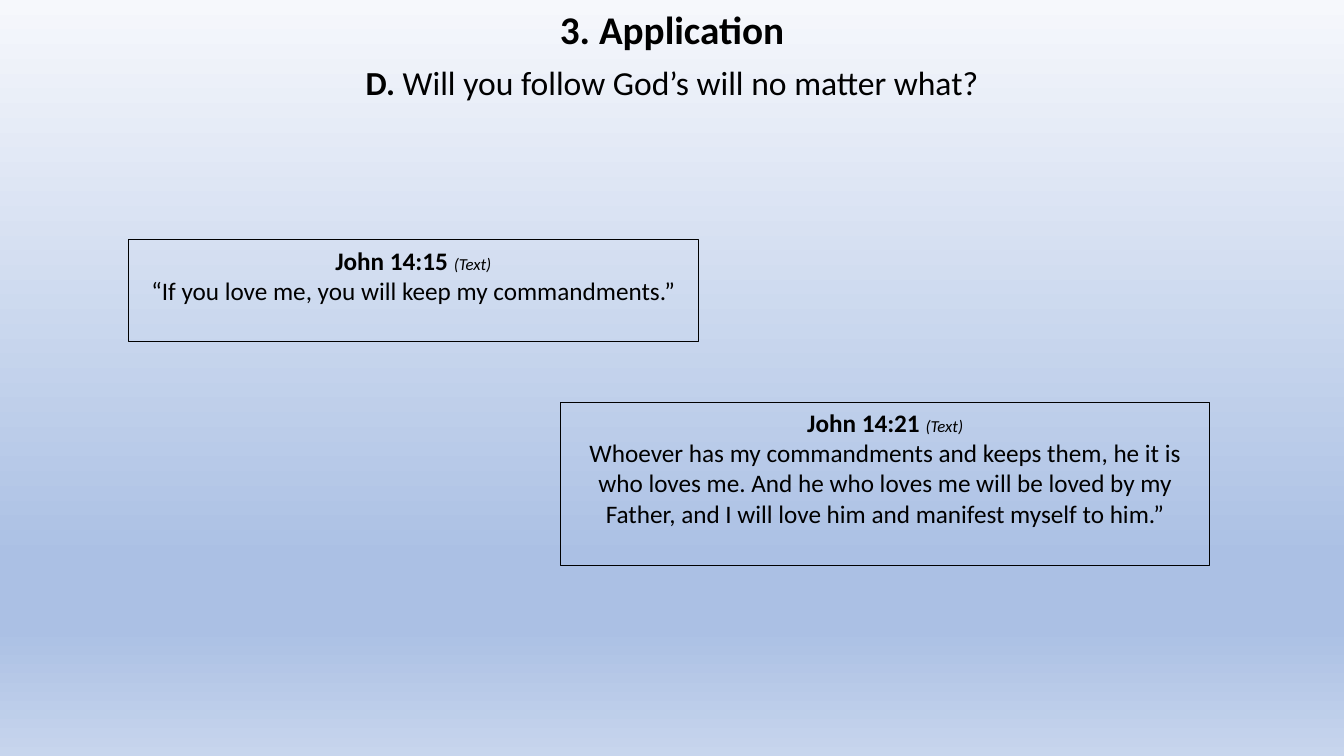
from lxml import etree
from pptx import Presentation
from pptx.dml.color import RGBColor
from pptx.enum.shapes import MSO_SHAPE
from pptx.enum.text import MSO_ANCHOR, PP_ALIGN
from pptx.oxml.ns import qn
from pptx.util import Inches, Pt

RECTANGLE = MSO_SHAPE.RECTANGLE
CENTER = PP_ALIGN.CENTER
TOP = MSO_ANCHOR.TOP
FONT = "Calibri"
COLORS = {"ink": "000000", "sky": "F6F8FC", "blue": "ABC0E4", "haze": "C7D5ED"}
BACKGROUND_STOPS = [(0, "sky"), (74, "blue"), (83, "blue"), (100, "haze")]


def paint_background(slide):
    """Fill the background with a vertical gradient of several stops."""
    fill = slide.background.fill
    fill.gradient()
    fill.gradient_angle = 270
    stop_list = next(slide.element.iter(qn("a:gsLst")))
    for stop in list(stop_list):
        stop_list.remove(stop)
    for percent, color in BACKGROUND_STOPS:
        stop = etree.SubElement(stop_list, qn("a:gs"), pos=str(percent * 1000))
        etree.SubElement(stop, qn("a:srgbClr"), val=COLORS[color])


def add_run(paragraph, text, size, bold=False, italic=False):
    """Append a formatted run to a paragraph."""
    run = paragraph.add_run()
    run.text = text
    font = run.font
    font.name, font.size = FONT, Pt(size)
    font.bold, font.italic = bold, italic
    font.color.rgb = RGBColor.from_string(COLORS["ink"])


def write_lines(shape, lines):
    """Write centred paragraphs, each a list of run settings."""
    frame = shape.text_frame
    frame.word_wrap = True
    frame.vertical_anchor = TOP
    for index, runs in enumerate(lines):
        paragraph = frame.add_paragraph() if index else frame.paragraphs[0]
        paragraph.alignment = CENTER
        for run in runs:
            add_run(paragraph, *run)


def add_heading(slide, top, height, runs):
    """Add a one-line heading across the slide."""
    box = slide.shapes.add_textbox(0, Inches(top), Inches(13.33), Inches(height))
    write_lines(box, [runs])


def add_verse(slide, left, top, width, height, reference, verse):
    """Add an outlined box with a Bible reference above its verse."""
    shape = slide.shapes.add_shape(
        RECTANGLE, Inches(left), Inches(top), Inches(width), Inches(height))
    shape.shadow.inherit = False
    shape.fill.background()
    shape.line.color.rgb = RGBColor.from_string(COLORS["ink"])
    shape.line.width = Pt(0.75)
    write_lines(shape, [
        [(reference + " ", 18, True), ("(Text)", 12, False, True)],
        [(verse, 18)],
    ])


def main():
    """Build the application slide and save it."""
    presentation = Presentation()
    presentation.slide_width = Inches(13.33)
    presentation.slide_height = Inches(7.5)
    slide = presentation.slides.add_slide(presentation.slide_layouts[6])
    paint_background(slide)
    add_heading(slide, 0, 0.57, [("3. Application", 28, True)])
    add_heading(slide, 0.57, 0.5, [
        ("D. ", 24, True), ("Will you follow God’s will no matter what?", 24)])
    add_verse(slide, 1.27, 2.38, 5.66, 1.01, "John 14:15",
              "“If you love me, you will keep my commandments.”")
    add_verse(slide, 5.56, 3.99, 6.44, 1.62, "John 14:21",
              "Whoever has my commandments and keeps them, he it is who loves me. "
              "And he who loves me will be loved by my Father, "
              "and I will love him and manifest myself to him.”")
    presentation.save("out.pptx")


if __name__ == "__main__":
    main()
